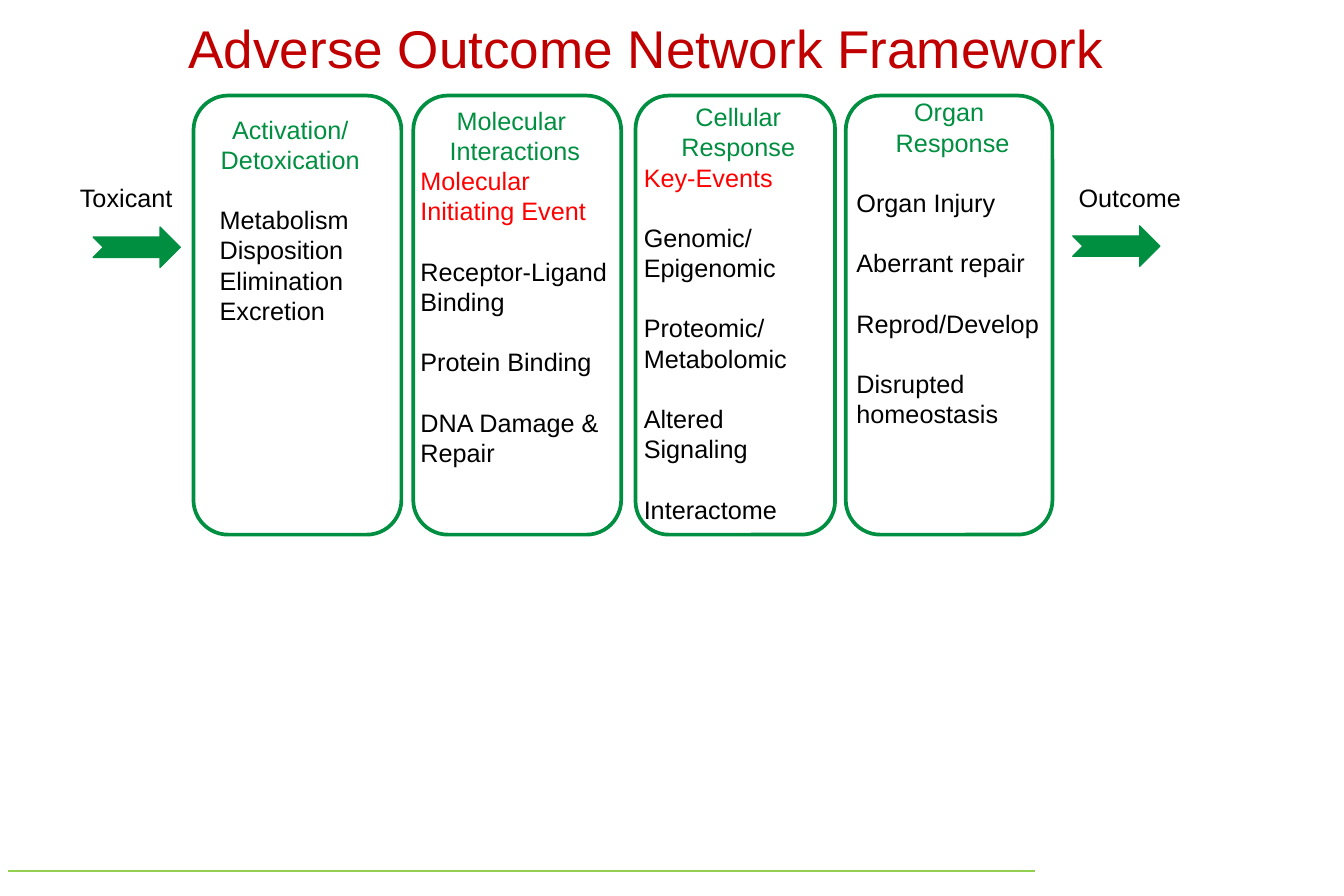
from dataclasses import dataclass

from pptx import Presentation
from pptx.dml.color import RGBColor
from pptx.enum.shapes import MSO_CONNECTOR, MSO_SHAPE
from pptx.enum.text import MSO_ANCHOR, PP_ALIGN
from pptx.oxml.ns import qn
from pptx.util import Inches, Pt

CENTER, LEFT = PP_ALIGN.CENTER, PP_ALIGN.LEFT
TOP, BOTTOM = MSO_ANCHOR.TOP, MSO_ANCHOR.BOTTOM
ROUNDED, ARROW = MSO_SHAPE.ROUNDED_RECTANGLE, MSO_SHAPE.NOTCHED_RIGHT_ARROW
STRAIGHT = MSO_CONNECTOR.STRAIGHT

WIDTH, HEIGHT = Inches(11.25), Inches(7.5)
COLUMNS, ROWS = 225, 150
TITLE_ONLY = 5
CARD_TOP, CARD_HEIGHT = 16, 73.5


@dataclass(frozen=True)
class Theme:
    font: str = "Arial"
    title: RGBColor = RGBColor(0xC0, 0x00, 0x00)
    green: RGBColor = RGBColor(0x00, 0x8F, 0x41)
    red: RGBColor = RGBColor(0xFF, 0x00, 0x00)
    black: RGBColor = RGBColor(0x00, 0x00, 0x00)
    rule: RGBColor = RGBColor(0x92, 0xD0, 0x50)
    title_size: Pt = Pt(32)
    body_size: Pt = Pt(15.2)
    pitch: Pt = Pt(18.2)


THEME = Theme()


@dataclass(frozen=True)
class Stage:
    card: tuple
    text: tuple
    heading: list
    key_lines: list
    groups: list


STAGES = [
    Stage((32.4, 34.8), (34.8, 18.1, 27.6), ["Activation/", "Detoxication"], [],
          [["Metabolism", "Disposition", "Elimination", "Excretion"]]),
    Stage((69.2, 34.8), (68.4, 16.6, 35.6), ["Molecular ", "Interactions"],
          ["Molecular", "Initiating Event"],
          [["Receptor-Ligand", "Binding"], ["Protein Binding"],
           ["DNA Damage &", "Repair"]]),
    Stage((106.4, 33.4), (105.8, 16, 35.6), ["Cellular Response"], ["Key-Events"],
          [["Genomic/", "Epigenomic"], ["Proteomic/", "Metabolomic"],
           ["Altered Signaling"], ["Interactome"]]),
    Stage((141.6, 34.6), (141.4, 15.2, 35), ["Organ", " Response"], [],
          [["Organ Injury"], ["Aberrant repair"], ["Reprod/Develop"],
           ["Disrupted", "homeostasis"]]),
]


def grid(left, top, width, height):
    return (round(WIDTH * left / COLUMNS), round(HEIGHT * top / ROWS),
            round(WIDTH * width / COLUMNS), round(HEIGHT * height / ROWS))


def add_run(paragraph, text, size, color):
    run = paragraph.add_run()
    run.text = text
    run.font.name, run.font.size, run.font.bold = THEME.font, size, False
    run.font.color.rgb = color


def add_title(slide, text):
    title = slide.shapes.title
    title.left, title.top, title.width, title.height = grid(0, 1, 216.4, 12.2)
    frame = title.text_frame
    frame.margin_left = frame.margin_right = frame.margin_top = frame.margin_bottom = 0
    frame.vertical_anchor = BOTTOM
    paragraph = frame.paragraphs[0]
    paragraph.alignment = CENTER
    add_run(paragraph, text, THEME.title_size, THEME.title)


def add_text(slide, place, lines, wrap=True):
    frame = slide.shapes.add_textbox(*grid(*place)).text_frame
    frame.word_wrap = wrap
    frame.vertical_anchor = TOP
    for index, (text, color, alignment, gap) in enumerate(lines):
        paragraph = frame.add_paragraph() if index else frame.paragraphs[0]
        paragraph.alignment = alignment
        paragraph.line_spacing = THEME.pitch
        paragraph.space_before = THEME.pitch if gap else Pt(0)
        add_run(paragraph, text, THEME.body_size, color)


def add_shape(slide, kind, place, line_width, filled):
    shape = slide.shapes.add_shape(kind, *grid(*place))
    shape.shadow.inherit = False
    shape.line.color.rgb = THEME.green
    shape.line.width = line_width
    if filled:
        shape.fill.solid()
        shape.fill.fore_color.rgb = THEME.green
    else:
        shape.fill.background()


def add_stage(slide, stage):
    left, width = stage.card
    add_shape(slide, ROUNDED, (left, CARD_TOP, width, CARD_HEIGHT), Pt(2.25), False)
    lines = [(text, THEME.green, CENTER, False) for text in stage.heading]
    lines += [(text, THEME.red, LEFT, False) for text in stage.key_lines]
    for group in stage.groups:
        lines += [(text, THEME.black, LEFT, index == 0)
                  for index, text in enumerate(group)]
    text_left, text_top, text_width = stage.text
    add_text(slide, (text_left, text_top, text_width, CARD_HEIGHT), lines)


def add_flow(slide, label, label_left, label_width, arrow_left, arrow_top):
    add_text(slide, (label_left, 29.6, label_width, 7.2),
             [(label, THEME.black, LEFT, False)], wrap=False)
    add_shape(slide, ARROW, (arrow_left, arrow_top, 14.6, 6.8), Pt(0.75), True)


def add_rule(slide):
    left, top, width, height = grid(1.4, 145.8, 171.8, 0)
    rule = slide.shapes.add_connector(STRAIGHT, left, top, left + width, top + height)
    rule.line.color.rgb = THEME.rule
    rule.line.width = Pt(1)
    properties = rule._element.spPr
    properties.append(properties.makeelement(qn("a:effectLst"), {}))


def main():
    presentation = Presentation()
    presentation.slide_width, presentation.slide_height = WIDTH, HEIGHT
    slide = presentation.slides.add_slide(presentation.slide_layouts[TITLE_ONLY])
    add_rule(slide)
    add_title(slide, "Adverse Outcome Network Framework")
    for stage in STAGES:
        add_stage(slide, stage)
    add_flow(slide, "Toxicant", 11.4, 19.8, 15.6, 38)
    add_flow(slide, "Outcome", 178.6, 21.4, 179.6, 37.8)
    presentation.save("out.pptx")


if __name__ == "__main__":
    main()
